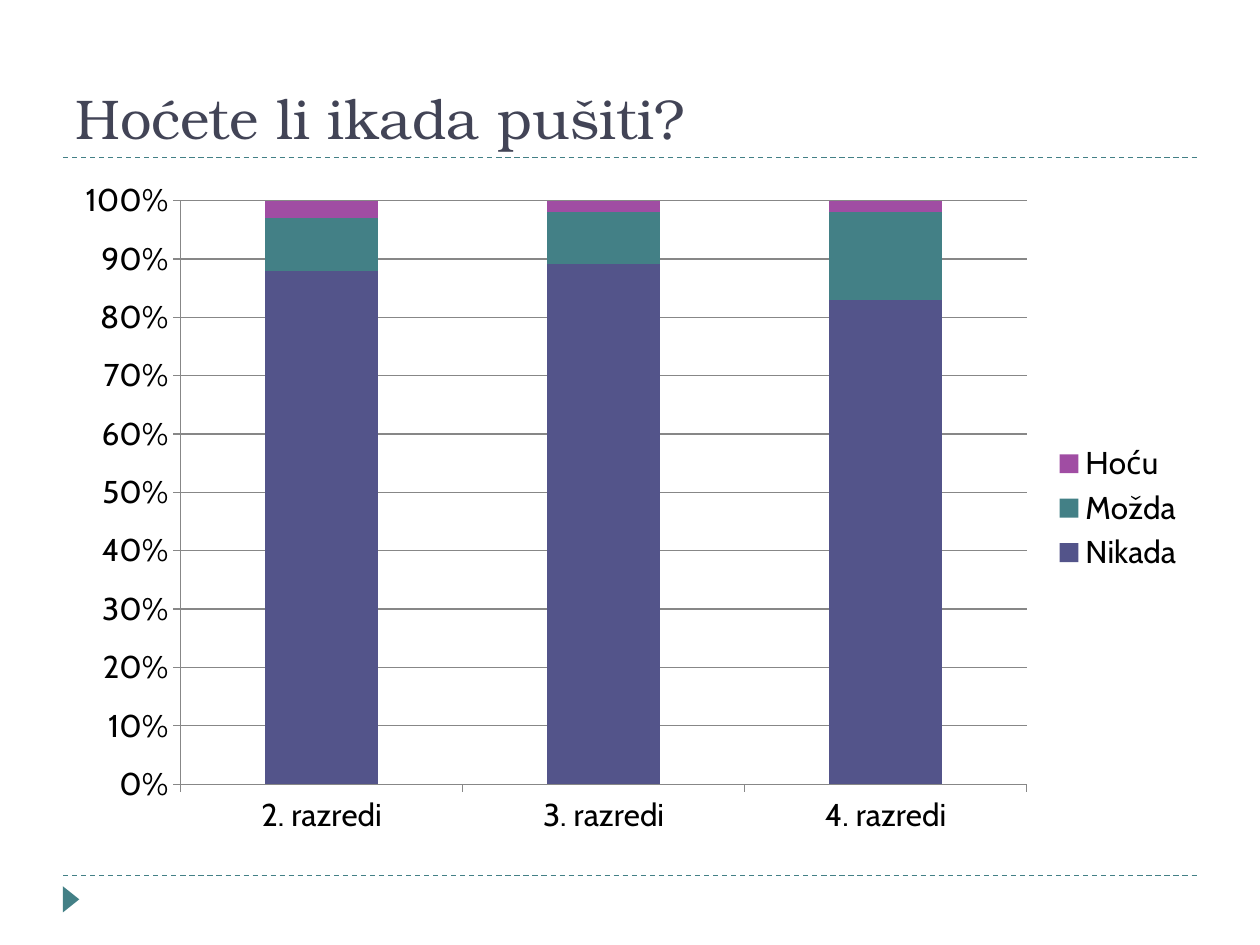
from lxml.etree import SubElement
from pptx import Presentation
from pptx.chart.data import CategoryChartData
from pptx.dml.color import RGBColor
from pptx.enum.chart import XL_CHART_TYPE, XL_LEGEND_POSITION, XL_TICK_MARK
from pptx.enum.dml import MSO_LINE
from pptx.enum.shapes import MSO_CONNECTOR, MSO_SHAPE
from pptx.enum.text import MSO_ANCHOR, PP_ALIGN
from pptx.oxml.ns import qn
from pptx.util import Pt

INDIGO = RGBColor(0x53, 0x54, 0x8A)
TEAL = RGBColor(0x43, 0x80, 0x86)
PURPLE = RGBColor(0xA0, 0x4D, 0xA3)
SLATE = RGBColor(0x42, 0x44, 0x56)
BLACK = RGBColor(0, 0, 0)
GREY = RGBColor(0x87, 0x87, 0x87)

CLASSES = ["2. razredi", "3. razredi", "4. razredi"]
ANSWERS = [
    ("Nikada", (88, 90, 83), INDIGO),
    ("Možda", (9, 9, 15), TEAL),
    ("Hoću", (3, 2, 2), PURPLE),
]


def add_rule(slide, left, top, width):
    """Draw a dashed horizontal rule."""
    rule = slide.shapes.add_connector(
        MSO_CONNECTOR.STRAIGHT, Pt(left), Pt(top), Pt(left + width), Pt(top))
    rule.line.color.rgb = TEAL
    rule.line.width = Pt(0.75)
    rule.line.dash_style = MSO_LINE.DASH
    SubElement(rule._element.spPr, qn("a:effectLst"))


def add_heading(slide, left, top, width, height):
    """Place the title with a rule along its lower edge."""
    add_rule(slide, left, top + height, width)
    heading = slide.shapes.title
    heading.left, heading.top = Pt(left), Pt(top)
    heading.width, heading.height = Pt(width), Pt(height)
    frame = heading.text_frame
    frame.word_wrap = True
    frame.vertical_anchor = MSO_ANCHOR.BOTTOM
    question = frame.paragraphs[0]
    question.alignment = PP_ALIGN.LEFT
    run = question.add_run()
    run.text = "Hoćete li ikada pušiti?"
    run.font.name = "TeX Gyre Bonum"
    run.font.size = Pt(32)
    run.font.color.rgb = SLATE


def add_footer(slide, left, top, width):
    """Draw the footer rule and the arrow below its left end."""
    add_rule(slide, left, top, width)
    arrow = slide.shapes.add_shape(
        MSO_SHAPE.ISOSCELES_TRIANGLE, Pt(left - 2.9), Pt(top + 8.8), Pt(15), Pt(9.4))
    arrow.rotation = 90
    arrow.fill.solid()
    arrow.fill.fore_color.rgb = TEAL
    arrow.line.fill.background()
    arrow.shadow.inherit = False


def add_answers_chart(slide, left, top, width, height):
    """Chart the share of each answer by class."""
    survey = CategoryChartData()
    survey.categories = CLASSES
    for answer, shares, _ in ANSWERS:
        survey.add_series(answer, shares)
    chart = slide.shapes.add_chart(
        XL_CHART_TYPE.COLUMN_STACKED_100,
        Pt(left), Pt(top), Pt(width), Pt(height), survey).chart
    chart.has_title = False
    chart.font.name = "Cabin"
    chart.font.size = Pt(18)
    chart.font.color.rgb = BLACK

    chart.has_legend = True
    chart.legend.position = XL_LEGEND_POSITION.RIGHT
    chart.legend.include_in_layout = False

    columns = chart.plots[0]
    columns.gap_width = 150
    columns.overlap = 100
    columns.vary_by_categories = False
    for series, (_, _, color) in zip(columns.series, ANSWERS):
        series.format.fill.solid()
        series.format.fill.fore_color.rgb = color

    shares_axis = chart.value_axis
    shares_axis.has_major_gridlines = True
    shares_axis.major_gridlines.format.line.color.rgb = GREY
    shares_axis.major_unit = 0.1
    shares_axis.tick_labels.number_format = "0%"
    shares_axis.tick_labels.number_format_is_linked = False
    for axis in (chart.category_axis, shares_axis):
        axis.major_tick_mark = XL_TICK_MARK.OUTSIDE
        axis.format.line.color.rgb = GREY


def main():
    """Build the survey slide."""
    deck = Presentation()
    deck.slide_width, deck.slide_height = Pt(720), Pt(540)
    slide = deck.slides.add_slide(deck.slide_layouts[5])
    add_heading(slide, 36, 12, 648, 78)
    add_footer(slide, 36, 500.4, 648)
    add_answers_chart(slide, 36, 96, 648, 388.8)
    deck.save("out.pptx")


if __name__ == "__main__":
    main()
